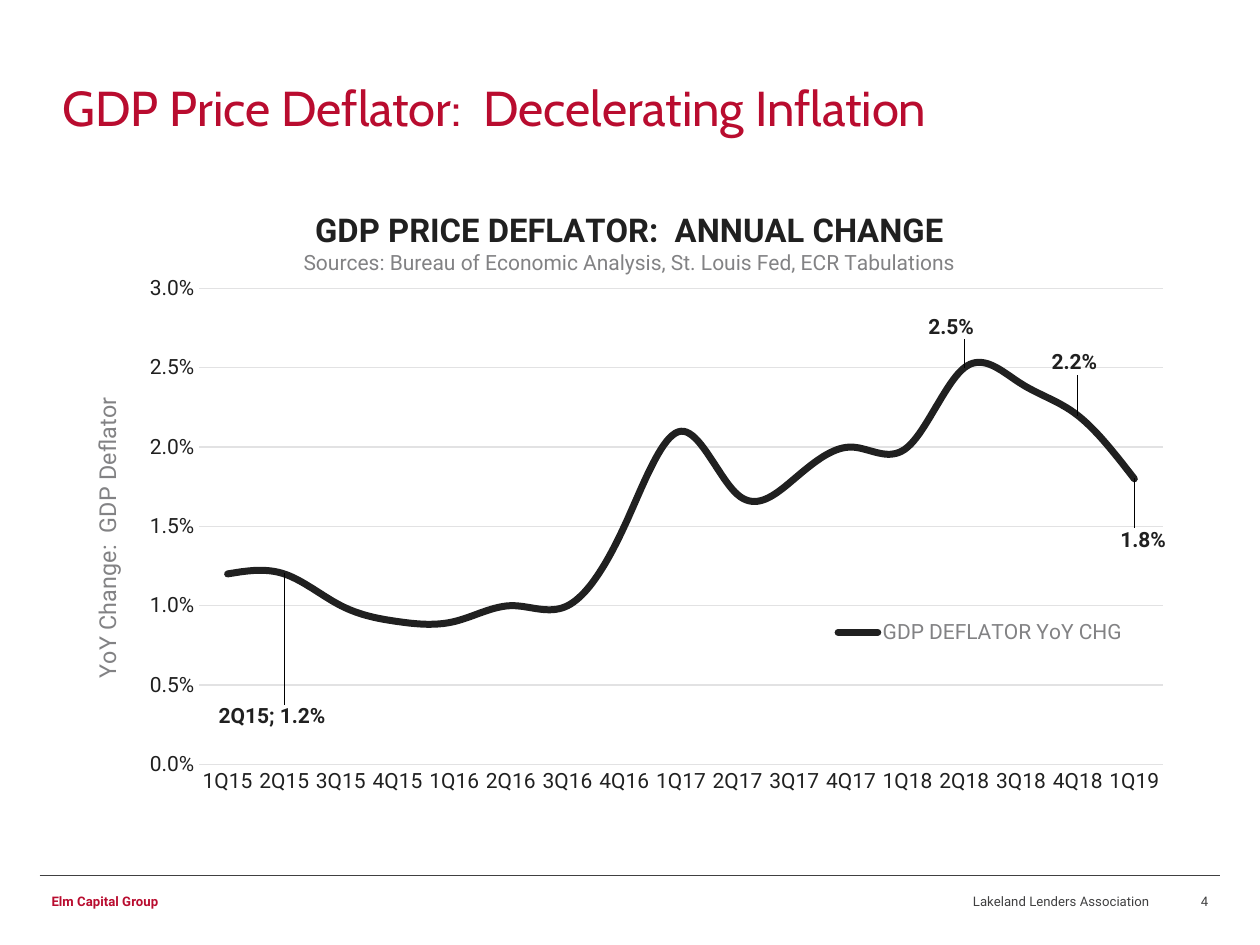
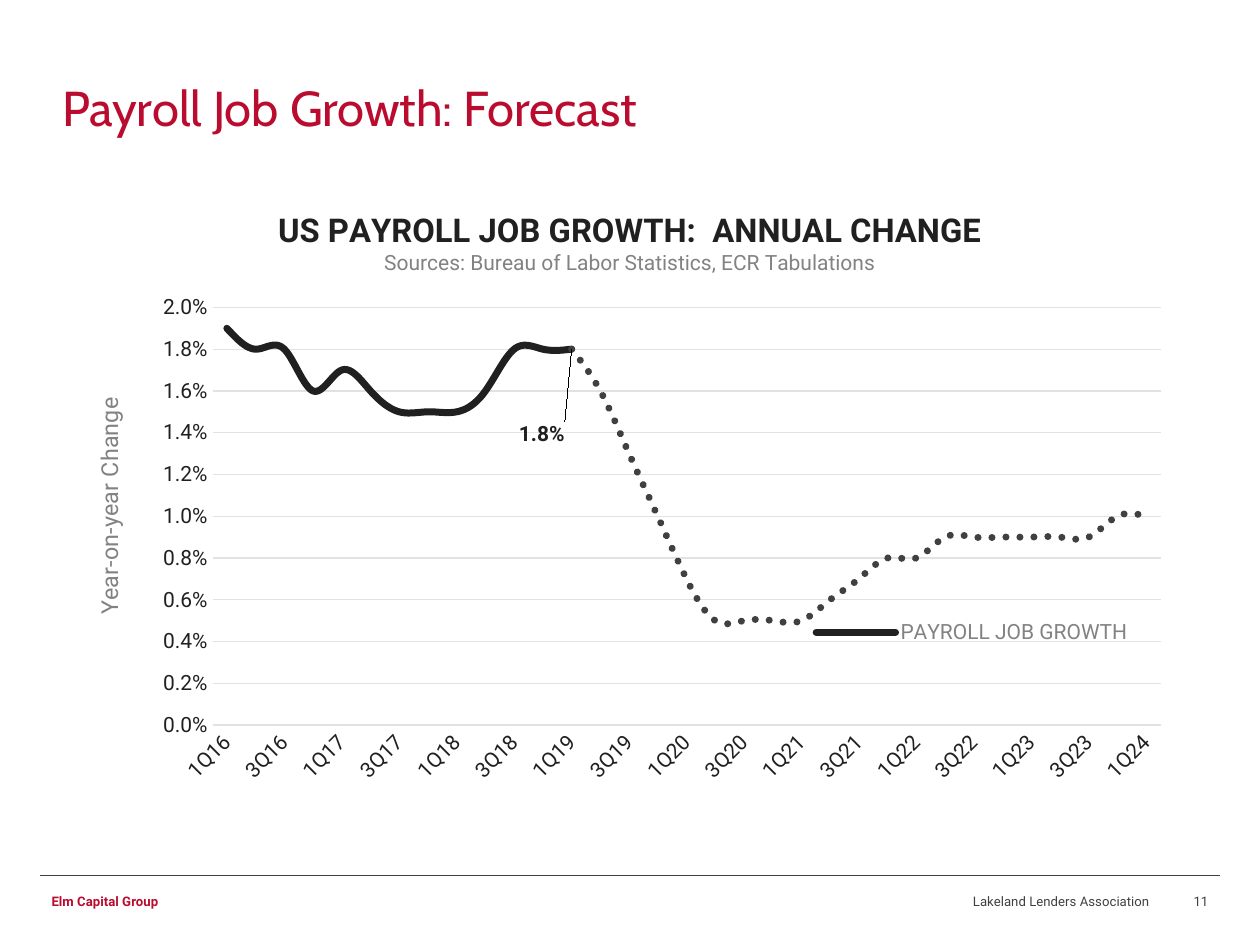
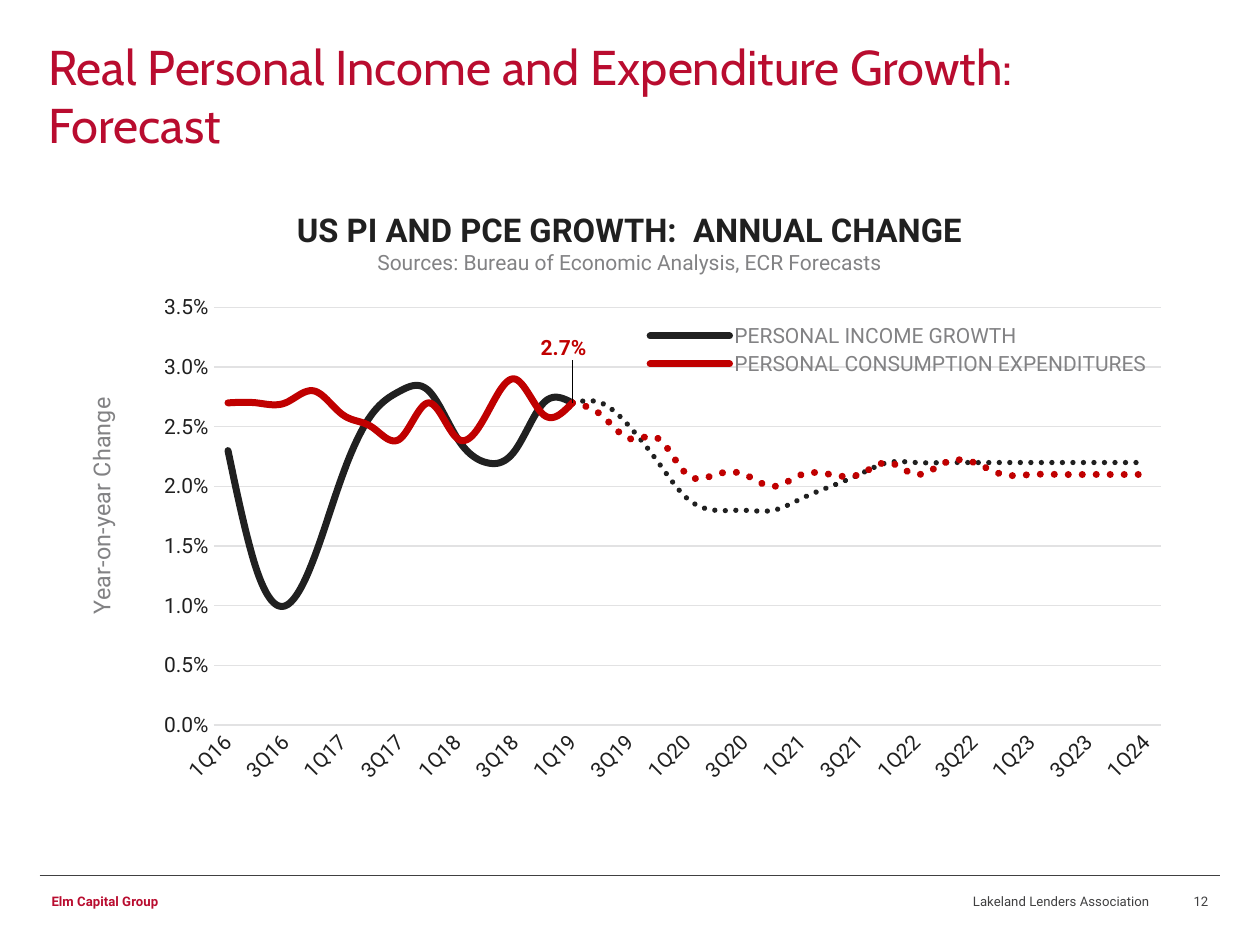
from dataclasses import dataclass
from typing import Any, Optional

from pptx import Presentation
from pptx import util as u
from pptx.chart import data
from pptx.dml.color import RGBColor
from pptx.enum import chart as kinds
from pptx.enum import dml, shapes, text
from pptx.oxml import ns, parse_xml

COLORS = {
    "brand": "B90C2F",
    "body": "404041",
    "ink": "202020",
    "muted": "828284",
    "grid": "E2E2E3",
    "red": "C00000",
}
FORMATS = {
    "title": {"name": "Cabin", "size": u.Pt(28), "bold": False},
    "long title": {"name": "Cabin", "size": u.Pt(27.9), "bold": False},
    "company": {"name": "Roboto", "size": u.Pt(7.5), "bold": True},
    "footer": {"name": "Roboto", "size": u.Pt(7.5), "bold": False},
    "chart": {"name": "Roboto", "size": u.Pt(10)},
    "heading": {"name": "Roboto", "size": u.Pt(18.7), "bold": True},
    "axis title": {"name": "Roboto", "size": u.Pt(13.3), "bold": False},
    "tick": {"name": "Roboto", "size": u.Pt(12), "bold": False},
    "label": {"name": "Roboto", "size": u.Pt(12), "bold": True},
}
COMPANY = "Elm Capital Group"
AUDIENCE = "Lakeland Lenders Association"
PERCENT = "0.0%"
ACTUAL_QUARTERS = 12


@dataclass(frozen=True)
class Area:
    left: float
    top: float
    width: float = 0
    height: float = 0

    def lengths(self) -> tuple:
        return tuple(u.Cm(n) for n in (self.left, self.top, self.width, self.height))


@dataclass(frozen=True)
class Callout:
    point: int
    shift: Area
    with_quarter: bool = False


@dataclass(frozen=True)
class Curve:
    name: str
    values: tuple
    color: str = "ink"
    weight: float = 4
    forecast: bool = False
    callouts: tuple = ()


@dataclass(frozen=True)
class GrowthSlide:
    number: int
    title: str
    heading: str
    sources: str
    axis_title: str
    first_year: int
    quarters: int
    maximum: float
    step: float
    curves: tuple
    plot: Area
    legend: Area
    heading_spot: Area
    axis_spot: Area
    title_area: Area = Area(1.01, 1.27, 23.42, 1.78)
    title_style: str = "title"
    slanted: bool = True


CHART_AREA = Area(1.57, 3.76, 22.25, 13.18)
COMPANY_AREA = Area(0.79, 17.88, 5.16, 0.58)
AUDIENCE_AREA = Area(14.86, 17.65, 8.56, 1.02)
NUMBER_AREA = Area(22.27, 17.65, 2.34, 1.02)

SLIDES = (
    GrowthSlide(
        4, "GDP Price Deflator:  Decelerating Inflation",
        "GDP PRICE DEFLATOR:  ANNUAL CHANGE",
        "Sources: Bureau of Economic Analysis, St. Louis Fed, ECR Tabulations",
        "YoY Change:  GDP Deflator", 15, 17, 0.03, 0.005,
        (
            Curve(
                "GDP DEFLATOR YoY CHG",
                (0.012, 0.012, 0.01, 0.009, 0.009, 0.01, 0.01, 0.015, 0.021,
                 0.017, 0.018, 0.02, 0.02, 0.025, 0.024, 0.022, 0.018),
                callouts=(
                    Callout(1, Area(-0.011, 0.245), True),
                    Callout(13, Area(-0.012, -0.035)),
                    Callout(15, Area(-0.003, -0.054)),
                    Callout(16, Area(0.008, 0.121)),
                ),
            ),
        ),
        Area(0.11, 0.156, 0.873, 0.728), Area(0.68, 0.657, 0.275, 0.05),
        Area(0.201, 0.03), Area(0.008, 0.316), slanted=False,
    ),
    GrowthSlide(
        11, "Payroll Job Growth: Forecast",
        "US PAYROLL JOB GROWTH:  ANNUAL CHANGE",
        "Sources: Bureau of Labor Statistics, ECR Tabulations",
        "Year-on-year Change", 16, 33, 0.02, 0.002,
        (
            Curve(
                "PAYROLL JOB GROWTH",
                (0.019, 0.018, 0.018, 0.016, 0.017, 0.016, 0.015, 0.015, 0.015,
                 0.016, 0.018, 0.018, 0.018),
                callouts=(Callout(12, Area(-0.027, 0.157)),),
            ),
            Curve(
                "Series 2",
                (0.018, 0.016, 0.013, 0.01, 0.007, 0.005, 0.005, 0.005, 0.005,
                 0.006, 0.007, 0.008, 0.008, 0.009, 0.009, 0.009, 0.009, 0.009,
                 0.009, 0.01, 0.01),
                "body", forecast=True,
            ),
        ),
        Area(0.122, 0.185, 0.859, 0.639), Area(0.66, 0.657, 0.3, 0.05),
        Area(0.178, 0.03), Area(0.01, 0.316),
    ),
    GrowthSlide(
        12, "Real Personal Income and Expenditure Growth:  Forecast",
        "US PI AND PCE GROWTH:  ANNUAL CHANGE",
        "Sources: Bureau of Economic Analysis, ECR Forecasts",
        "Year-on-year Change", 16, 33, 0.035, 0.005,
        (
            Curve(
                "PERSONAL INCOME GROWTH",
                (0.023, 0.013, 0.01, 0.014, 0.021, 0.026, 0.028, 0.028, 0.024,
                 0.022, 0.023, 0.027, 0.027),
            ),
            Curve(
                "Series 2",
                (0.027, 0.027, 0.025, 0.022, 0.019, 0.018, 0.018, 0.018, 0.019,
                 0.02, 0.021) + (0.022,) * 10,
                weight=3, forecast=True,
            ),
            Curve(
                "PERSONAL CONSUMPTION EXPENDITURES",
                (0.027, 0.027, 0.027, 0.028, 0.026, 0.025, 0.024, 0.027, 0.024,
                 0.026, 0.029, 0.026, 0.027),
                "red", callouts=(Callout(12, Area(-0.008, -0.057)),),
            ),
            Curve(
                "Series 4",
                (0.027, 0.026, 0.024, 0.024, 0.021, 0.021, 0.021, 0.02, 0.021,
                 0.021, 0.021, 0.022, 0.021, 0.022, 0.022) + (0.021,) * 6,
                "red", forecast=True,
            ),
        ),
        Area(0.123, 0.185, 0.858, 0.639), Area(0.511, 0.205, 0.465, 0.09),
        Area(0.195, 0.03), Area(0.003, 0.316),
        title_area=Area(0.73, 0.77, 22.43, 2.29), title_style="long title",
    ),
)


def apply(target: Any, values: dict) -> None:
    for name, value in values.items():
        setattr(target, name, value)


def style_font(font: Any, style: str, color: str) -> None:
    apply(font, FORMATS[style])
    font.color.rgb = RGBColor.from_string(COLORS[color])


def style_line(line: Any, color: str, weight: float) -> None:
    line.color.rgb = RGBColor.from_string(COLORS[color])
    line.width = u.Pt(weight)


def chart_xml(tag: str, content: str) -> Any:
    return parse_xml(f"<c:{tag} {ns.nsdecls('c')}>{content}</c:{tag}>")


def insert_after(parent: Any, child: Any, *leading: str) -> None:
    names = {ns.qn(f"c:{name}") for name in leading}
    places = [i + 1 for i, item in enumerate(parent) if item.tag in names]
    parent.insert(max(places, default=0), child)


def place(element: Any, area: Area, inner: bool = False) -> None:
    for old in element.findall(ns.qn("c:layout")):
        element.remove(old)
    parts = '<c:layoutTarget val="inner"/>' if inner else ""
    if element.tag != ns.qn("c:dLbl"):
        parts += '<c:xMode val="edge"/><c:yMode val="edge"/>'
    parts += f'<c:x val="{area.left}"/><c:y val="{area.top}"/>'
    if area.width:
        parts += f'<c:w val="{area.width}"/><c:h val="{area.height}"/>'
    layout = chart_xml("layout", f"<c:manualLayout>{parts}</c:manualLayout>")
    insert_after(element, layout, "tx", "legendPos", "legendEntry", "idx")


def add_text(page: Any, area: Area, words: str, style: str, color: str,
             align: Any = text.PP_ALIGN.LEFT, anchor: Any = text.MSO_ANCHOR.MIDDLE) -> None:
    frame = page.shapes.add_textbox(*area.lengths()).text_frame
    apply(frame, {"word_wrap": True, "vertical_anchor": anchor})
    para = frame.paragraphs[0]
    para.alignment = align
    span = para.add_run()
    span.text = words
    style_font(span.font, style, color)


def add_frame(page: Any, slide: GrowthSlide) -> None:
    rule = page.shapes.add_connector(
        shapes.MSO_CONNECTOR.STRAIGHT, u.Cm(0.8), u.Cm(17.65), u.Cm(24.6), u.Cm(17.65))
    style_line(rule.line, "body", 0.75)
    rule._element.spPr.append(parse_xml(f"<a:effectLst {ns.nsdecls('a')}/>"))
    right = text.PP_ALIGN.RIGHT
    add_text(page, COMPANY_AREA, COMPANY, "company", "brand", anchor=text.MSO_ANCHOR.TOP)
    add_text(page, slide.title_area, slide.title, slide.title_style, "brand")
    add_text(page, NUMBER_AREA, str(slide.number), "footer", "body", right)
    add_text(page, AUDIENCE_AREA, AUDIENCE, "footer", "body", right)


def write_title(title: Any, lines: tuple, spot: Area) -> None:
    frame = title.text_frame
    for index, (words, style, color) in enumerate(lines):
        para = frame.add_paragraph() if index else frame.paragraphs[0]
        span = para.add_run()
        span.text = words
        style_font(span.font, style, color)
    place(title._element, spot)


def add_callout(series: Any, callout: Callout, color: str) -> None:
    label = series.points[callout.point].data_label
    style_font(label.font, "label", color)
    label.position = kinds.XL_LABEL_POSITION.ABOVE
    element = series._element.xpath(f'.//c:dLbl[c:idx/@val="{callout.point}"]')[0]
    place(element, callout.shift)
    if callout.with_quarter:
        element.find(ns.qn("c:showCatName")).set("val", "1")
        insert_after(element, chart_xml("separator", "; "), "showBubbleSize")


def style_curve(series: Any, curve: Curve) -> None:
    series.smooth = True
    series.marker.style = kinds.XL_MARKER_STYLE.NONE
    line = series.format.line
    style_line(line, curve.color, curve.weight)
    if curve.forecast:
        line.dash_style = dml.MSO_LINE.ROUND_DOT
    series._element.xpath("c:spPr/a:ln")[0].set("cap", "rnd")
    for callout in curve.callouts:
        add_callout(series, callout, curve.color)
    if curve.callouts:
        series.data_labels.show_value = False
        labels = series._element.find(ns.qn("c:dLbls"))
        labels.append(chart_xml(
            "extLst",
            '<c:ext uri="{CE6537A1-D6FC-4f65-9D91-7224C49458BB}" '
            'xmlns:c15="http://schemas.microsoft.com/office/drawing/2012/chart">'
            '<c15:showLeaderLines val="1"/></c:ext>'))


def style_axes(chart: Any, slide: GrowthSlide) -> None:
    for axis in (chart.category_axis, chart.value_axis):
        axis.major_tick_mark = kinds.XL_TICK_MARK.NONE
        axis.minor_tick_mark = kinds.XL_TICK_MARK.NONE
        style_font(axis.tick_labels.font, "tick", "ink")
    style_line(chart.category_axis.format.line, "grid", 0.75)
    if slide.slanted:
        body = chart.category_axis._element.xpath("c:txPr/a:bodyPr")[0]
        body.set("rot", "-2700000")
    values = chart.value_axis
    apply(values, {"minimum_scale": 0, "maximum_scale": slide.maximum,
                   "major_unit": slide.step, "has_major_gridlines": True})
    apply(values.tick_labels, {"number_format": PERCENT, "number_format_is_linked": False})
    values.format.line.fill.background()
    style_line(values.major_gridlines.format.line, "grid", 0.75)
    write_title(values.axis_title, ((slide.axis_title, "axis title", "muted"),), slide.axis_spot)
    body = values.axis_title._element.xpath(".//a:bodyPr")[0]
    body.set("rot", "-5400000")
    body.set("vert", "horz")


def style_legend(chart: Any, slide: GrowthSlide) -> None:
    chart.has_legend = True
    legend = chart.legend
    apply(legend, {"position": kinds.XL_LEGEND_POSITION.BOTTOM, "include_in_layout": False})
    style_font(legend.font, "tick", "muted")
    for index, curve in enumerate(slide.curves):
        if curve.forecast:
            entry = chart_xml("legendEntry", f'<c:idx val="{index}"/><c:delete val="1"/>')
            insert_after(legend._element, entry, "legendPos", "legendEntry")
    place(legend._element, slide.legend)


def add_growth_chart(page: Any, slide: GrowthSlide) -> None:
    table = data.CategoryChartData(number_format=PERCENT)
    table.categories = [f"{i % 4 + 1}Q{slide.first_year + i // 4}" for i in range(slide.quarters)]
    gap: tuple[Optional[float], ...] = (None,) * ACTUAL_QUARTERS
    for curve in slide.curves:
        values = gap + curve.values if curve.forecast else curve.values
        table.add_series(curve.name, values + (None,) * (slide.quarters - len(values)))
    chart = page.shapes.add_chart(
        kinds.XL_CHART_TYPE.LINE, *CHART_AREA.lengths(), table).chart
    style_font(chart.font, "chart", "body")
    chart.plots[0].vary_by_categories = False
    chart.has_title = True
    write_title(chart.chart_title, ((slide.heading, "heading", "ink"),
                                    (slide.sources, "tick", "muted")), slide.heading_spot)
    style_axes(chart, slide)
    style_legend(chart, slide)
    for series, curve in zip(chart.plots[0].series, slide.curves):
        style_curve(series, curve)
    place(chart._chartSpace.xpath("c:chart/c:plotArea")[0], slide.plot, inner=True)


def main() -> None:
    deck = Presentation()
    apply(deck, {"slide_width": u.Cm(25.4), "slide_height": u.Cm(19.05)})
    for slide in SLIDES:
        page = deck.slides.add_slide(deck.slide_layouts[6])
        add_frame(page, slide)
        add_growth_chart(page, slide)
    deck.save("out.pptx")


if __name__ == "__main__":
    main()
